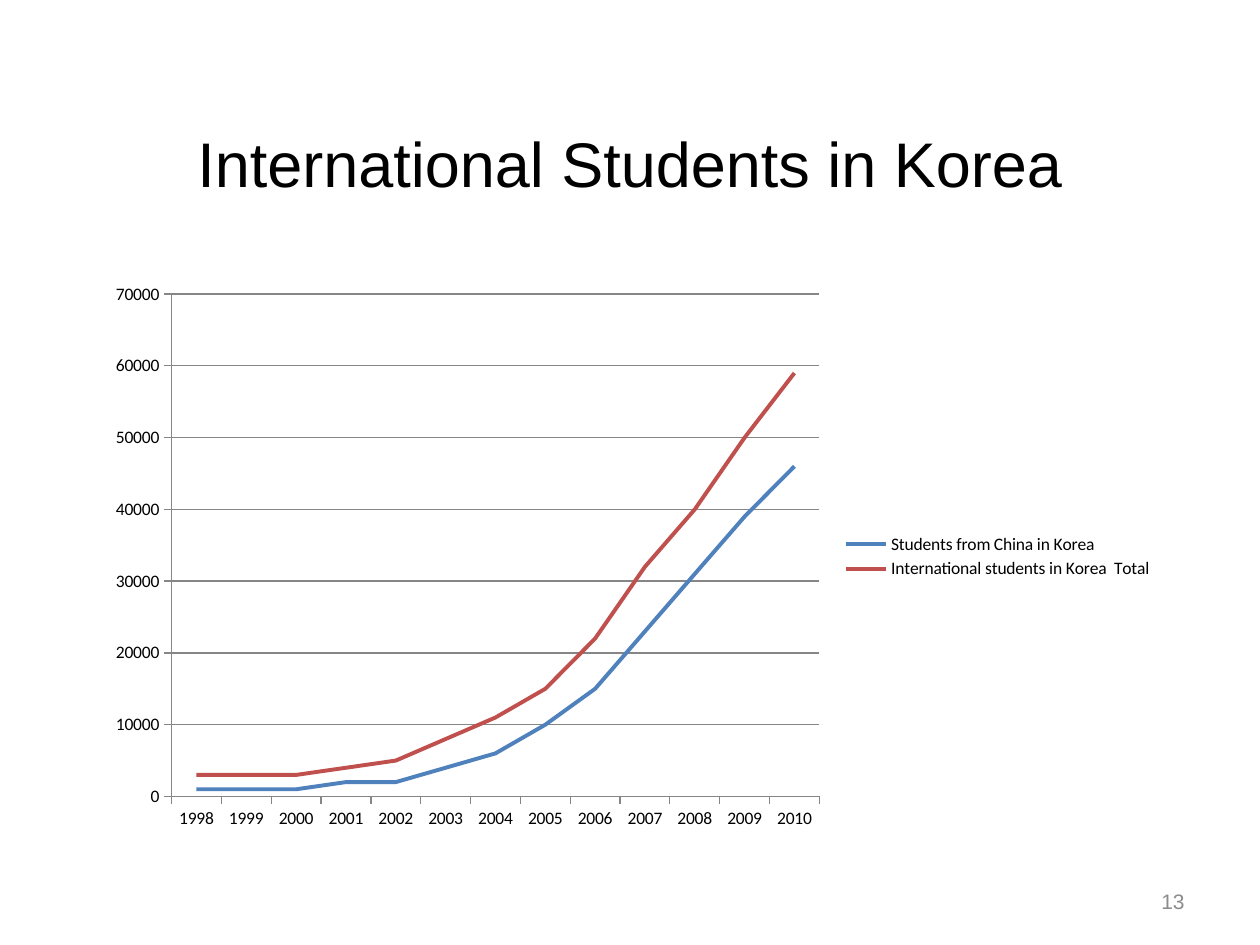
"""Build a slide with a line chart of international students in Korea."""
import pptx
import pptx.chart.data
import pptx.dml.color
import pptx.enum.chart
import pptx.enum.text
import pptx.util

PX = 7620


def px(*lengths):
    return [pptx.util.Emu(length * PX) for length in lengths]


def color(value):
    return pptx.dml.color.RGBColor.from_string(value)


presentation = pptx.Presentation()
presentation.slide_width, presentation.slide_height = px(1200, 900)
slide = presentation.slides.add_slide(presentation.slide_layouts[6])

align = pptx.enum.text.PP_ALIGN
texts = [
    {"text": "International Students in Korea", "box": (90, 80, 1020, 150),
     "size": 36, "color": "000000", "align": align.CENTER},
    {"text": "13", "box": (860, 834, 280, 48),
     "size": 12, "color": "8C8C8C", "align": align.RIGHT},
]
for item in texts:
    frame = slide.shapes.add_textbox(*px(*item["box"])).text_frame
    frame.word_wrap = True
    frame.vertical_anchor = pptx.enum.text.MSO_ANCHOR.MIDDLE
    paragraph = frame.paragraphs[0]
    paragraph.alignment = item["align"]
    run = paragraph.add_run()
    run.text = item["text"]
    run.font.color.rgb = color(item["color"])
    font_format = {"name": "Arial", "size": pptx.util.Pt(item["size"])}
    for name, value in font_format.items():
        setattr(run.font, name, value)

series_rows = [
    ("Students from China in Korea", "4F81BD",
     [1000, 1000, 1000, 2000, 2000, 4000, 6000, 10000, 15000, 23000, 31000, 39000, 46000]),
    ("International students in Korea  Total", "C0504D",
     [3000, 3000, 3000, 4000, 5000, 8000, 11000, 15000, 22000, 32000, 40000, 50000, 59000]),
]
chart_data = pptx.chart.data.CategoryChartData()
chart_data.categories = [str(year) for year in range(1998, 2011)]
for name, line_color, values in series_rows:
    chart_data.add_series(name, values)

chart = slide.shapes.add_chart(
    pptx.enum.chart.XL_CHART_TYPE.LINE, *px(90, 260, 1020, 540), chart_data).chart
chart.has_title = False
chart.has_legend = True
chart.legend.position = pptx.enum.chart.XL_LEGEND_POSITION.RIGHT
chart.legend.include_in_layout = False
chart.font.name = "Calibri"
chart.font.size = pptx.util.Pt(10)
chart.font.color.rgb = color("000000")
chart.plots[0].vary_by_categories = False

for series, (name, line_color, values) in zip(chart.plots[0].series, series_rows):
    series.smooth = False
    series.marker.style = pptx.enum.chart.XL_MARKER_STYLE.NONE
    series.format.line.width = pptx.util.Pt(2.25)
    series.format.line.color.rgb = color(line_color)

value_format = {"minimum_scale": 0, "maximum_scale": 70000, "major_unit": 10000,
                "has_major_gridlines": True}
for name, value in value_format.items():
    setattr(chart.value_axis, name, value)

axis_format = {"major_tick_mark": pptx.enum.chart.XL_TICK_MARK.OUTSIDE,
               "minor_tick_mark": pptx.enum.chart.XL_TICK_MARK.NONE}
for axis in (chart.category_axis, chart.value_axis):
    for name, value in axis_format.items():
        setattr(axis, name, value)

for part in (chart.category_axis, chart.value_axis, chart.value_axis.major_gridlines):
    part.format.line.width = pptx.util.Pt(0.75)
    part.format.line.color.rgb = color("868686")

presentation.save("out.pptx")
